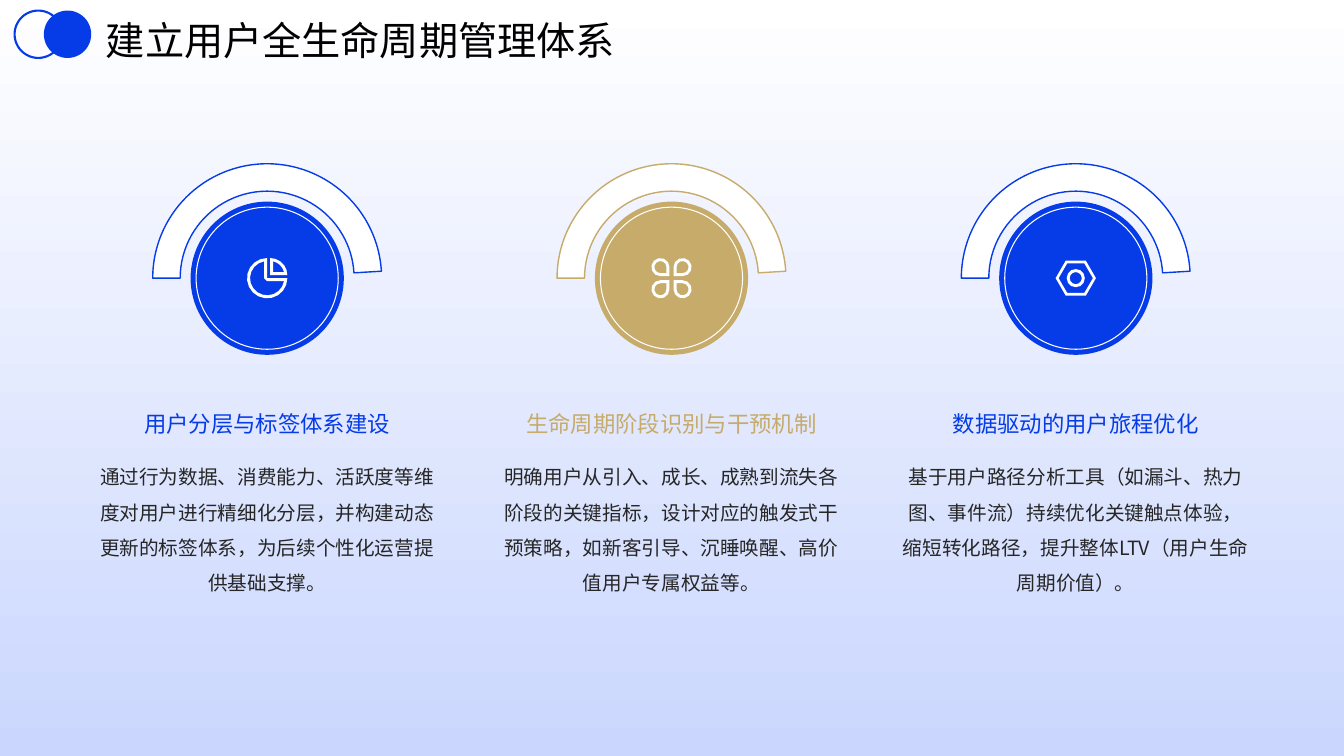
"""Build the slide on managing the whole user life cycle."""
from dataclasses import dataclass
from math import cos, hypot, radians, sin

from pptx import Presentation, slide as slides
from pptx.dml import color as dml
from pptx.enum import shapes, text
from pptx.oxml import ns
from pptx.shapes import autoshape, base
from pptx.util import Inches, Pt
from lxml import etree

FONT = "Noto Sans CJK SC"
COLORS = {"blue": "063CE8", "gold": "C6AB6A", "white": "FFFFFF",
          "mist": "CAD6FE", "body": "262626", "black": "000000"}
FIRST_X, PITCH, MEDAL_Y = 2.65, 4.01, 2.76
TEXT_WIDTH = 3.46
Point = tuple[float, float]
Contour = list[Point]


@dataclass
class Stage:
    """One column: its heading, explanation, accent colour and icon."""
    heading: str
    detail: str
    accent: str
    icon: list[Contour]


def rgb(name: str) -> dml.RGBColor:
    """Look up a named colour."""
    return dml.RGBColor.from_string(COLORS[name])


def arc(x: float, y: float, radius: float, start: float, end: float, steps: int) -> Contour:
    """Give evenly spaced points along an arc, clockwise in degrees."""
    angles = [radians(start + (end - start) * i / steps) for i in range(steps + 1)]
    return [(x + radius * cos(a), y + radius * sin(a)) for a in angles]


def ring(radius: float, sides: int) -> Contour:
    """Give the corners of a regular polygon around the icon centre."""
    return arc(0, 0, radius, 0, 360, sides)[:-1]


def pie_icon() -> list[Contour]:
    """Outline a pie with a detached quarter."""
    return [arc(0, 0, 0.2, 0, 270, 14) + [(0, 0)],
            arc(0, 0, 0.17, 10, 260, 13) + [(-0.03, 0), (0, 0.03)],
            arc(0.03, -0.03, 0.17, -90, 0, 5) + [(0.03, -0.03)],
            arc(0.03, -0.03, 0.14, -78, -12, 4) + [(0.06, -0.06)]]


def petal_icon() -> list[Contour]:
    """Outline four petals pointing at the centre."""
    contours = []
    for angle in (45, 135, 225, 315):
        unit_x, unit_y = cos(radians(angle)), sin(radians(angle))
        reach = hypot(0.11, 0.11)
        for radius in (0.09, 0.06):
            tip = reach - hypot(radius, radius)
            petal = arc(reach * unit_x, reach * unit_y, radius, angle + 225, angle + 495, 8)
            contours.append(petal + [(tip * unit_x, tip * unit_y)])
    return contours


def nut_icon() -> list[Contour]:
    """Outline a hexagonal nut."""
    return [ring(0.2, 6), ring(0.17, 6), ring(0.09, 12), ring(0.06, 12)]


STAGES = [
    Stage("用户分层与标签体系建设",
          "通过行为数据、消费能力、活跃度等维度对用户进行精细化分层，并构建动态更新的标签体系，为后续个性化运营提供基础支撑。",
          "blue", pie_icon()),
    Stage("生命周期阶段识别与干预机制",
          "明确用户从引入、成长、成熟到流失各阶段的关键指标，设计对应的触发式干预策略，如新客引导、沉睡唤醒、高价值用户专属权益等。",
          "gold", petal_icon()),
    Stage("数据驱动的用户旅程优化",
          "基于用户路径分析工具（如漏斗、热力图、事件流）持续优化关键触点体验，缩短转化路径，提升整体LTV（用户生命周期价值）。",
          "blue", nut_icon()),
]


def paint(shape: autoshape.Shape, fill: str | None, line: str | None = None,
          weight: float = 1) -> None:
    """Set the fill and line of a shape and drop its shadow."""
    shape.shadow.inherit = False
    if fill:
        shape.fill.solid()
        shape.fill.fore_color.rgb = rgb(fill)
    else:
        shape.fill.background()
    if line:
        shape.line.color.rgb = rgb(line)
        shape.line.width = Pt(weight)
    else:
        shape.line.fill.background()


def add_round(slide: slides.Slide, x: float, y: float, size: float, fill: str | None,
              line: str | None = None, weight: float = 1,
              kind: shapes.MSO_SHAPE = shapes.MSO_SHAPE.FLOWCHART_CONNECTOR) -> autoshape.Shape:
    """Add a round shape around a centre point."""
    disc = slide.shapes.add_shape(kind, Inches(x - size / 2), Inches(y - size / 2),
                                  Inches(size), Inches(size))
    paint(disc, fill, line, weight)
    return disc


def write(box: base.BaseShape, content: str, *, size: float, color: str, spacing: float,
          align: text.PP_ALIGN = text.PP_ALIGN.CENTER,
          anchor: text.MSO_ANCHOR = text.MSO_ANCHOR.TOP, inset: bool = False) -> None:
    """Write one formatted paragraph into a box."""
    frame = box.text_frame
    frame.word_wrap = True
    frame.auto_size = text.MSO_AUTO_SIZE.NONE
    frame.vertical_anchor = anchor
    if not inset:
        frame.margin_left = frame.margin_right = 0
        frame.margin_top = frame.margin_bottom = 0
    paragraph = frame.paragraphs[0]
    paragraph.alignment = align
    paragraph.line_spacing = spacing
    run = paragraph.add_run()
    run.text = content
    run.font.size = Pt(size)
    run.font.color.rgb = rgb(color)
    run.font.name = FONT
    east_asian = etree.SubElement(run.font._element, ns.qn("a:ea"))
    east_asian.set("typeface", FONT)


def add_icon(slide: slides.Slide, x: float, y: float, contours: list[Contour]) -> None:
    """Draw white contours around a centre point as one shape."""
    outlines = [[(Inches(x + dx), Inches(y + dy)) for dx, dy in contour]
                for contour in contours]
    builder = slide.shapes.build_freeform(*outlines[0][0])
    builder.add_line_segments(outlines[0][1:], close=True)
    for outline in outlines[1:]:
        builder.move_to(*outline[0])
        builder.add_line_segments(outline[1:], close=True)
    paint(builder.convert_to_shape(), "white")


def add_stage(slide: slides.Slide, stage: Stage, x: float) -> None:
    """Draw one column centred on x."""
    arch = add_round(slide, x, MEDAL_Y, 2.27, "white", stage.accent,
                     kind=shapes.MSO_SHAPE.BLOCK_ARC)
    for index, value in enumerate((108, 213.91, 0.12)):
        arch.adjustments[index] = value
    add_round(slide, x, MEDAL_Y, 1.52, stage.accent)
    add_round(slide, x, MEDAL_Y, 1.41, stage.accent, "white", 0.75)
    add_icon(slide, x, MEDAL_Y, stage.icon)
    left, width = Inches(x - TEXT_WIDTH / 2), Inches(TEXT_WIDTH)
    heading = slide.shapes.add_textbox(left, Inches(3.51), width, Inches(0.83))
    write(heading, stage.heading, size=16, color=stage.accent, spacing=1.3,
          anchor=text.MSO_ANCHOR.BOTTOM)
    detail = slide.shapes.add_textbox(left, Inches(4.5), width, Inches(1.65))
    write(detail, stage.detail, size=14, color="body", spacing=1.5)


def add_backdrop(slide: slides.Slide, width: int, height: int) -> None:
    """Lay a vertical gradient behind everything."""
    backdrop = slide.shapes.add_shape(shapes.MSO_SHAPE.RECTANGLE, 0, 0, width, height)
    paint(backdrop, None)
    backdrop.fill.gradient()
    backdrop.fill.gradient_angle = 270
    for stop, position, name in zip(backdrop.fill.gradient_stops, (0, 1), ("white", "mist")):
        stop.position = position
        stop.color.rgb = rgb(name)
    slide.shapes.title.element.addprevious(backdrop.element)


def main() -> None:
    """Build and save the deck."""
    deck = Presentation()
    deck.slide_width, deck.slide_height = Inches(13.33), Inches(7.5)
    slide = deck.slides.add_slide(deck.slide_layouts[5])
    add_backdrop(slide, deck.slide_width, deck.slide_height)
    title = slide.shapes.title
    title.left, title.top = Inches(0.95), Inches(0.1)
    title.width, title.height = Inches(9.84), Inches(0.49)
    write(title, "建立用户全生命周期管理体系", size=28, color="black", spacing=1.2,
          align=text.PP_ALIGN.LEFT, anchor=text.MSO_ANCHOR.MIDDLE, inset=True)
    for index, stage in enumerate(STAGES):
        add_stage(slide, stage, FIRST_X + PITCH * index)
    add_round(slide, 0.67, 0.34, 0.47, "blue")
    add_round(slide, 0.38, 0.34, 0.47, None, "blue", 1.5)
    deck.save("out.pptx")


if __name__ == "__main__":
    main()
